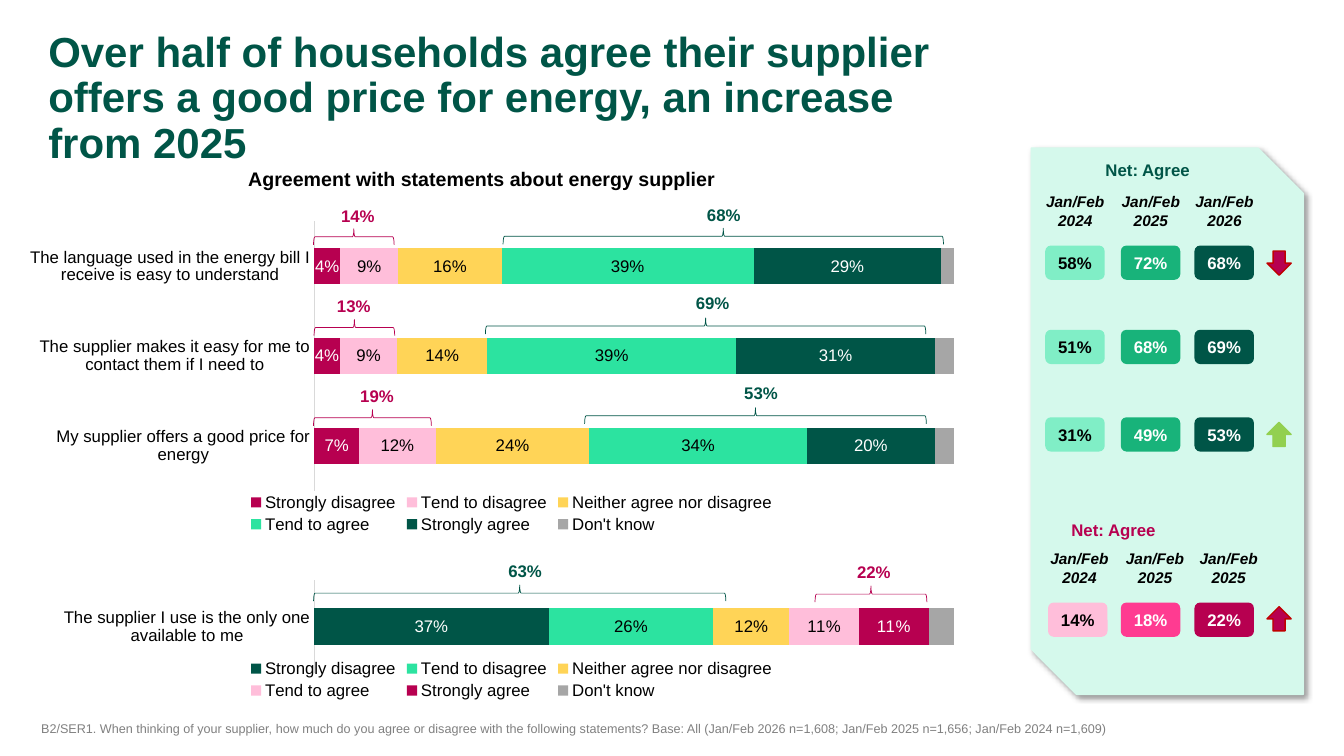
from pptx import Presentation
from pptx.chart.data import CategoryChartData
from pptx.dml.color import RGBColor
from pptx.enum.chart import XL_CHART_TYPE, XL_LABEL_POSITION, XL_LEGEND_POSITION, XL_TICK_MARK
from pptx.enum.shapes import MSO_SHAPE
from pptx.enum.text import MSO_ANCHOR, PP_ALIGN
from pptx.oxml import parse_xml
from pptx.oxml.ns import nsdecls, qn
from pptx.util import Pt

theme = {
    "font": "Arial",
    "green": RGBColor.from_string("005547"),
    "mid": RGBColor.from_string("18B37A"),
    "mint": RGBColor.from_string("80EEC6"),
    "bright": RGBColor.from_string("2CE3A0"),
    "pale": RGBColor.from_string("D5F9EC"),
    "lime": RGBColor.from_string("92D050"),
    "wine": RGBColor.from_string("B70050"),
    "red": RGBColor.from_string("C00000"),
    "hot": RGBColor.from_string("FF3B91"),
    "pink": RGBColor.from_string("FFBEDA"),
    "gold": RGBColor.from_string("FFD457"),
    "gray": RGBColor.from_string("A6A6A6"),
    "note": RGBColor.from_string("808080"),
    "rule": RGBColor.from_string("D9D9D9"),
    "black": RGBColor.from_string("000000"),
    "white": RGBColor.from_string("FFFFFF"),
    "title": 30, "head": 14, "body": 12, "date": 11, "base": 10, "foot": 9,
}


def style(font, tone="black", size="body", **more):
    look = {"name": theme["font"], "size": Pt(theme[size]), **more}
    for key, val in look.items():
        setattr(font, key, val)
    font.color.rgb = theme[tone]


def place(box, form=None, fill=None, line=None, width=1, words="",
          align=PP_ALIGN.CENTER, **look):
    spot = [Pt(n) for n in box]
    if form is None:
        shape = slide.shapes.add_textbox(*spot)
    else:
        shape = slide.shapes.add_shape(form, *spot)
        shape.shadow.inherit = False
        if fill:
            shape.fill.solid()
            shape.fill.fore_color.rgb = theme[fill]
        else:
            shape.fill.background()
        if line:
            shape.line.color.rgb = theme[line]
            shape.line.width = Pt(width)
        else:
            shape.line.fill.background()
    if words:
        frame = shape.text_frame
        anchor = MSO_ANCHOR.MIDDLE if form else MSO_ANCHOR.TOP
        for key, val in {"word_wrap": True, "vertical_anchor": anchor}.items():
            setattr(frame, key, val)
        para = frame.paragraphs[0]
        para.alignment = align
        run = para.add_run()
        run.text = words
        style(run.font, **look)
    return shape


deck = Presentation()
deck.slide_width, deck.slide_height = Pt(960), Pt(540)
slide = deck.slides.add_slide(deck.slide_layouts[6])

title = place((27.4, 18.7, 664, 44), align=PP_ALIGN.LEFT, tone="green", size="title", bold=True,
              words="Over half of households agree their supplier offers a good price for energy, "
                    "an increase from 2025")
title.text_frame.paragraphs[0].line_spacing = 0.9

panel = place((736.6, 105.8, 194.4, 390.2), MSO_SHAPE.SNIP_2_DIAG_RECTANGLE, "pale", "pale")
props = panel.element.spPr
props.remove(props.find(qn("a:effectLst")))
props.append(parse_xml(
    f'<a:effectLst {nsdecls("a")}><a:outerShdw blurRad="{Pt(4)}" dist="{Pt(3)}" dir="2700000" '
    'algn="tl" rotWithShape="0"><a:srgbClr val="000000"><a:alpha val="40000"/></a:srgbClr>'
    '</a:outerShdw></a:effectLst>'))

place((22.3, 511.2, 792, 22.3), align=PP_ALIGN.LEFT, tone="note", size="foot",
      words="B2/SER1. When thinking of your supplier, how much do you agree or disagree with the "
            "following statements? Base: All (Jan/Feb 2026 n=1,608; Jan/Feb 2025 n=1,656; "
            "Jan/Feb 2024 n=1,609)")
place((149.8, 115.9, 388.8, 24.5), size="head", bold=True,
      words="Agreement with statements about energy supplier")

names = ["Strongly disagree", "Tend to disagree", "Neither agree nor disagree",
         "Tend to agree", "Strongly agree", "Don't know"]
tones = ["wine", "pink", "gold", "bright", "green"]
charts = [
    ((16.6, 118.1, 697.7, 265.7), (0.151, 0.724), tones + ["gray"],
     ["My supplier offers a good price for energy",
      "The supplier makes it easy for me to contact them if I need to",
      "The language used in the energy bill I receive is easy to understand"],
     [(0.07, 0.04, 0.04), (0.12, 0.09, 0.09), (0.24, 0.14, 0.16),
      (0.34, 0.39, 0.39), (0.2, 0.31, 0.29), (0.03, 0.03, 0.02)]),
    ((16.6, 401, 697.7, 101.5), (0.132, 0.655), tones[::-1] + ["gray"],
     ["The supplier I use is the only one available to me"],
     [(0.37,), (0.26,), (0.12,), (0.11,), (0.11,), (0.04,)]),
]
for box, (top, tall), hues, cats, rows in charts:
    data = CategoryChartData(number_format="0%")
    data.categories = cats
    for name, row in zip(names, rows):
        data.add_series(name, row)
    chart = slide.shapes.add_chart(
        XL_CHART_TYPE.BAR_STACKED_100, *[Pt(n) for n in box], data).chart
    style(chart.font, size="base")
    chart.has_title = False
    chart.has_legend = True
    for key, val in {"position": XL_LEGEND_POSITION.BOTTOM, "include_in_layout": False}.items():
        setattr(chart.legend, key, val)
    style(chart.legend.font)
    side = chart.category_axis
    for key in ("major_tick_mark", "minor_tick_mark"):
        setattr(side, key, XL_TICK_MARK.NONE)
    style(side.tick_labels.font)
    side.format.line.color.rgb = theme["rule"]
    side.format.line.width = Pt(0.75)
    for key, val in {"visible": False, "has_major_gridlines": False,
                     "minimum_scale": 0, "maximum_scale": 1}.items():
        setattr(chart.value_axis, key, val)
    plot = chart.plots[0]
    for key, val in {"gap_width": 150, "overlap": 100, "vary_by_categories": False}.items():
        setattr(plot, key, val)
    for bar, hue in zip(plot.series, hues):
        bar.format.fill.solid()
        bar.format.fill.fore_color.rgb = theme[hue]
        if hue != "gray":
            for key, val in {"show_value": True, "position": XL_LABEL_POSITION.CENTER,
                             "number_format": "0%", "number_format_is_linked": False}.items():
                setattr(bar.data_labels, key, val)
            style(bar.data_labels.font, "white" if hue in ("wine", "green") else "black")
    area = chart.element.find(".//" + qn("c:plotArea"))
    for old in area.findall(qn("c:layout")):
        area.remove(old)
    area.insert(0, parse_xml(
        f'<c:layout {nsdecls("c")}><c:manualLayout><c:layoutTarget val="inner"/>'
        '<c:xMode val="edge"/><c:yMode val="edge"/>'
        f'<c:x val="0.298"/><c:y val="{top}"/><c:w val="0.655"/><c:h val="{tall}"/>'
        '</c:manualLayout></c:layout>'))

braces = [
    ("14%", "wine", 252.7, 169.2, 57.6, 255.6, 143.3),
    ("68%", "green", 516.6, 168.8, 314.6, 517, 142.6),
    ("13%", "wine", 253.1, 234, 57.6, 252.7, 208),
    ("69%", "green", 504, 232.9, 314.6, 509, 205.9),
    ("19%", "wine", 266, 298.4, 84.2, 269.3, 272.2),
    ("53%", "green", 539.6, 297, 244.1, 543.6, 270),
    ("63%", "green", 371.2, 423.7, 294.5, 375.1, 396.7),
    ("22%", "wine", 622.1, 424.4, 79.9, 624.2, 397.4),
]
deep = 11.5
for words, tone, mid, line, span, text, top in braces:
    brace = place((mid - deep / 2, line - span / 2, deep, span), MSO_SHAPE.LEFT_BRACE,
                  line=tone, width=0.5)
    brace.rotation = 90
    place((text - 22.3, top, 44.6, 21.6), words=words, tone=tone, bold=True)

lefts = [746.6, 800.6, 853.2]
heads = [
    (782.6, 110.2, "green", 0, 133.9, (2024, 2025, 2026)),
    (758.2, 367.9, "wine", 3, 388.8, (2024, 2025, 2025)),
]
for left, top, tone, shift, down, years in heads:
    place((left, top, 80, 21.6), words="Net: Agree", align=PP_ALIGN.LEFT, tone=tone, bold=True)
    for x, year in zip(lefts, years):
        place((x - 7.7 + shift, down, 58.3, 33.8), words=f"Jan/Feb {year}",
              size="date", bold=True, italic=True)

greens, pinks = ("mint", "mid", "green"), ("pink", "hot", "wine")
nets = [
    (175.4, greens, ("58%", "72%", "68%")),
    (235.6, greens, ("51%", "68%", "69%")),
    (298.1, greens, ("31%", "49%", "53%")),
    (430.4, pinks, ("14%", "18%", "22%")),
]
for top, fills, shares in nets:
    for x, fill, share in zip(lefts, fills, shares):
        nudge = 2 if fill == "pink" else 0
        place((x + nudge, top, 42.5, 24.5), MSO_SHAPE.ROUNDED_RECTANGLE, fill, words=share,
              tone="black" if fill in ("mint", "pink") else "white", bold=True)

for top, fill, line, turn in [(179.3, "wine", "red", 180), (301.7, "lime", "lime", 0),
                              (433.4, "wine", "red", 0)]:
    arrow = place((905, top, 17.3, 17.3), MSO_SHAPE.UP_ARROW, fill, line)
    arrow.rotation = turn

deck.save("out.pptx")
